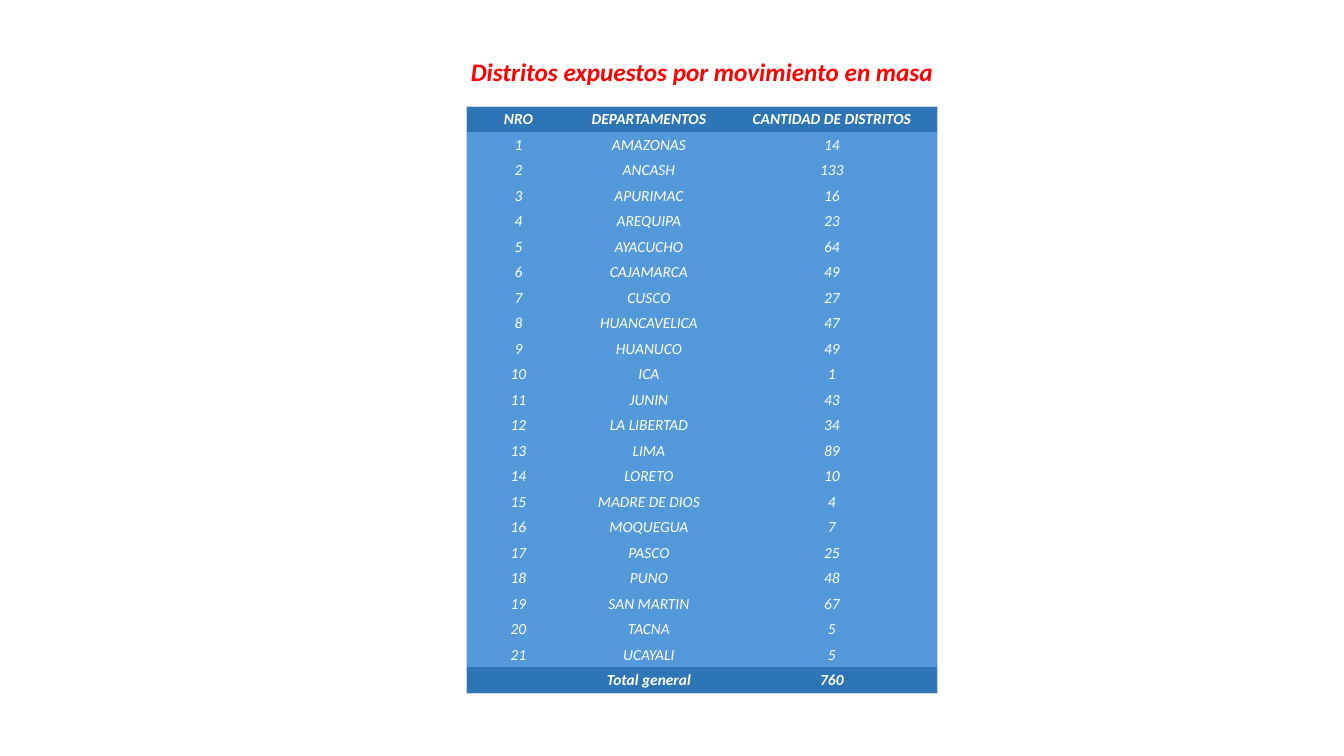
from lxml import etree
from pptx import Presentation
from pptx.dml.color import RGBColor
from pptx.enum.text import MSO_ANCHOR, PP_ALIGN
from pptx.oxml.ns import qn
from pptx.util import Pt

EMU_PER_PX = 914400 / 100.8
CENTER = PP_ALIGN.CENTER
MIDDLE = MSO_ANCHOR.MIDDLE
RED = RGBColor(0xFF, 0x00, 0x00)
WHITE = RGBColor(0xFF, 0xFF, 0xFF)
DARK_BLUE = RGBColor(0x2E, 0x75, 0xB6)
LIGHT_BLUE = RGBColor(0x54, 0x99, 0xDA)
PALE_BLUE = RGBColor(0xC4, 0xD5, 0xEB)

HEADINGS = ("NRO", "DEPARTAMENTOS", "CANTIDAD DE DISTRITOS")
DISTRICTS = (
    ("AMAZONAS", 14),
    ("ANCASH", 133),
    ("APURIMAC", 16),
    ("AREQUIPA", 23),
    ("AYACUCHO", 64),
    ("CAJAMARCA", 49),
    ("CUSCO", 27),
    ("HUANCAVELICA", 47),
    ("HUANUCO", 49),
    ("ICA", 1),
    ("JUNIN", 43),
    ("LA LIBERTAD", 34),
    ("LIMA", 89),
    ("LORETO", 10),
    ("MADRE DE DIOS", 4),
    ("MOQUEGUA", 7),
    ("PASCO", 25),
    ("PUNO", 48),
    ("SAN MARTIN", 67),
    ("TACNA", 5),
    ("UCAYALI", 5),
)
COLUMN_WIDTHS = (105, 156, 210)


def px(length):
    return round(length * EMU_PER_PX)


def write(para, text, size, color, bold):
    para.alignment = CENTER
    span = para.add_run()
    span.text = text
    span.font.color.rgb = color
    formats = {"name": "Calibri", "size": Pt(size), "bold": bold, "italic": True}
    for name, value in formats.items():
        setattr(span.font, name, value)


deck = Presentation()
deck.slide_width = px(1344)
deck.slide_height = px(756)
page = deck.slides.add_slide(deck.slide_layouts[5])

title = page.shapes.title
title_place = {"left": 458, "top": 51, "width": 488, "height": 40}
for name, value in title_place.items():
    setattr(title, name, px(value))
title.text_frame.word_wrap = False
title.text_frame.vertical_anchor = MIDDLE
write(title.text_frame.paragraphs[0],
      "Distritos expuestos por movimiento en masa", 18, RED, True)

total = sum(count for department, count in DISTRICTS)
rows = [HEADINGS]
for number, (department, count) in enumerate(DISTRICTS, 1):
    rows.append((str(number), department, str(count)))
rows.append(("", "Total general", str(total)))

last_row = len(rows) - 1
last_column = len(HEADINGS) - 1
table = page.shapes.add_table(
    len(rows), len(HEADINGS), px(466), px(106), px(sum(COLUMN_WIDTHS)), px(587)
).table
table.first_row = False
table.horz_banding = False
for column, width in zip(table.columns, COLUMN_WIDTHS):
    column.width = px(width)

cell_formats = {
    "margin_left": px(1),
    "margin_right": px(1),
    "margin_top": px(1),
    "margin_bottom": 0,
    "vertical_anchor": MIDDLE,
}
for row_index, texts in enumerate(rows):
    emphasized = row_index in (0, last_row)
    for column_index, text in enumerate(texts):
        cell = table.cell(row_index, column_index)
        for name, value in cell_formats.items():
            setattr(cell, name, value)

        outer_edges = {
            "a:lnL": column_index == 0,
            "a:lnR": column_index == last_column,
            "a:lnT": row_index == 0,
            "a:lnB": row_index == last_row,
        }
        properties = cell._tc.get_or_add_tcPr()
        for edge, visible in outer_edges.items():
            line = etree.SubElement(properties, qn(edge), w=str(Pt(0.5)))
            if visible:
                fill = etree.SubElement(line, qn("a:solidFill"))
                etree.SubElement(fill, qn("a:srgbClr"), val=str(PALE_BLUE))
            else:
                etree.SubElement(line, qn("a:noFill"))

        cell.fill.solid()
        cell.fill.fore_color.rgb = DARK_BLUE if emphasized else LIGHT_BLUE
        para = cell.text_frame.paragraphs[0]
        if text:
            write(para, text, 11, WHITE, emphasized)
        else:
            etree.SubElement(para._p, qn("a:endParaRPr"), sz="1100")

deck.save("out.pptx")
